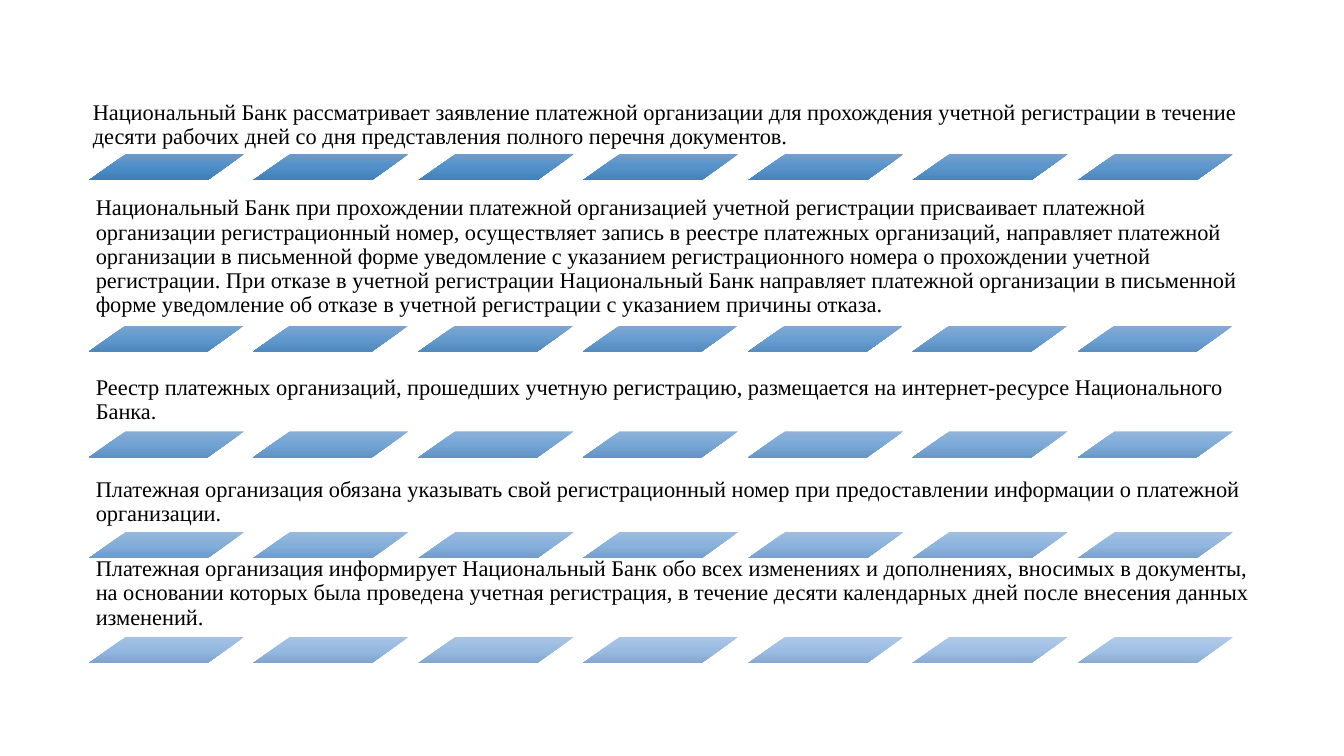
from copy import deepcopy

from pptx import Presentation
from pptx.dml.color import RGBColor
from pptx.enum.shapes import MSO_SHAPE as Shape
from pptx.enum.text import MSO_ANCHOR as Anchor
from pptx.oxml.ns import qn
from pptx.util import Pt

EMU_PER_PX = 9144  # 100 px to the inch
BARS_PER_ROW = 7

# Gradient stops (top, middle, bottom) of the first and the last bar
FIRST_BAR = ("6B99C9", "4D8DC7", "3E7EB7")
LAST_BAR = ("B1C9E7", "A2C1E6", "8CABD1")

# Each row: text left, text top, text height, top of the bars, text
ROWS = [
    (85, 98, 57, 153,
     "Национальный Банк рассматривает заявление платежной организации для "
     "прохождения учетной регистрации в течение десяти рабочих дней со дня "
     "представления полного перечня документов."),
    (88, 191, 131, 323,
     "Национальный Банк при прохождении платежной организацией учетной "
     "регистрации присваивает платежной организации регистрационный номер, "
     "осуществляет запись в реестре платежных организаций, направляет платежной "
     "организации в письменной форме уведомление с указанием регистрационного "
     "номера о прохождении учетной регистрации. При отказе в учетной регистрации "
     "Национальный Банк направляет платежной организации в письменной форме "
     "уведомление об отказе в учетной регистрации с указанием причины отказа."),
    (88, 361, 67, 428,
     "Реестр платежных организаций, прошедших учетную регистрацию, размещается "
     "на интернет-ресурсе Национального Банка."),
    (88, 467, 62, 528,
     "Платежная организация обязана указывать свой регистрационный номер при "
     "предоставлении информации о платежной организации."),
    (88, 567, 65, 632,
     "Платежная организация информирует Национальный Банк обо всех изменениях и "
     "дополнениях, вносимых в документы, на основании которых была проведена "
     "учетная регистрация, в течение десяти календарных дней после внесения "
     "данных изменений."),
]


def px(length):
    return length * EMU_PER_PX


def color(value):
    return RGBColor.from_string(value)


def blend(start, end, share):
    """Mix two hex colours; share runs from 0 (start) to 1 (end)."""
    pairs = zip(bytes.fromhex(start), bytes.fromhex(end))
    return "".join(f"{round(a + (b - a) * share):02X}" for a, b in pairs)


def write(frame, text, *, font="Times New Roman", size=16, ink="000000",
          line_spacing=0.9):
    paragraph = frame.paragraphs[0]
    paragraph.line_spacing = line_spacing
    run = paragraph.add_run()
    run.text = text
    run.font.name = font
    run.font.size = Pt(size)
    run.font.color.rgb = color(ink)


class SlideBuilder:
    inset = 7
    bar_slant = 1.408

    def __init__(self, slide):
        self.slide = slide

    def text(self, left, top, width, height, text, **style):
        box = self.slide.shapes.add_textbox(*map(px, (left, top, width, height)))
        frame = box.text_frame
        frame.word_wrap = True
        frame.vertical_anchor = Anchor.BOTTOM
        frame.margin_left = frame.margin_right = px(self.inset)
        frame.margin_top = frame.margin_bottom = px(self.inset)
        write(frame, text, **style)

    def bar(self, left, top, width, height, colors):
        shape = self.slide.shapes.add_shape(
            Shape.PARALLELOGRAM, *map(px, (left, top, width, height)))
        shape.shadow.inherit = False
        shape.adjustments[0] = self.bar_slant
        shape.line.fill.background()
        self.gradient(shape, colors)

    def gradient(self, shape, colors):
        """Fill from top to bottom with three evenly spaced stops."""
        fill = shape.fill
        fill.gradient()
        fill.gradient_angle = 270
        stop_list = next(shape.element.iter(qn("a:gsLst")))
        stop_list.insert(1, deepcopy(stop_list[0]))
        for index, (stop, value) in enumerate(zip(fill.gradient_stops, colors)):
            stop.position = index / 2
            stop.color.rgb = color(value)


def main():
    presentation = Presentation()
    presentation.slide_width = px(1333)
    presentation.slide_height = px(750)
    builder = SlideBuilder(
        presentation.slides.add_slide(presentation.slide_layouts[6]))

    last_index = len(ROWS) * BARS_PER_ROW - 1
    for row, (left, top, height, bar_top, text) in enumerate(ROWS):
        # Statement
        builder.text(left, top, 1159, height, text)
        # Row of bars, growing lighter from one to the next
        for column in range(BARS_PER_ROW):
            share = (row * BARS_PER_ROW + column) / last_index
            colors = [blend(start, end, share)
                      for start, end in zip(FIRST_BAR, LAST_BAR)]
            builder.bar(88 + column * 327 // 2, bar_top, 154, 26, colors)

    presentation.save("out.pptx")


if __name__ == "__main__":
    main()
